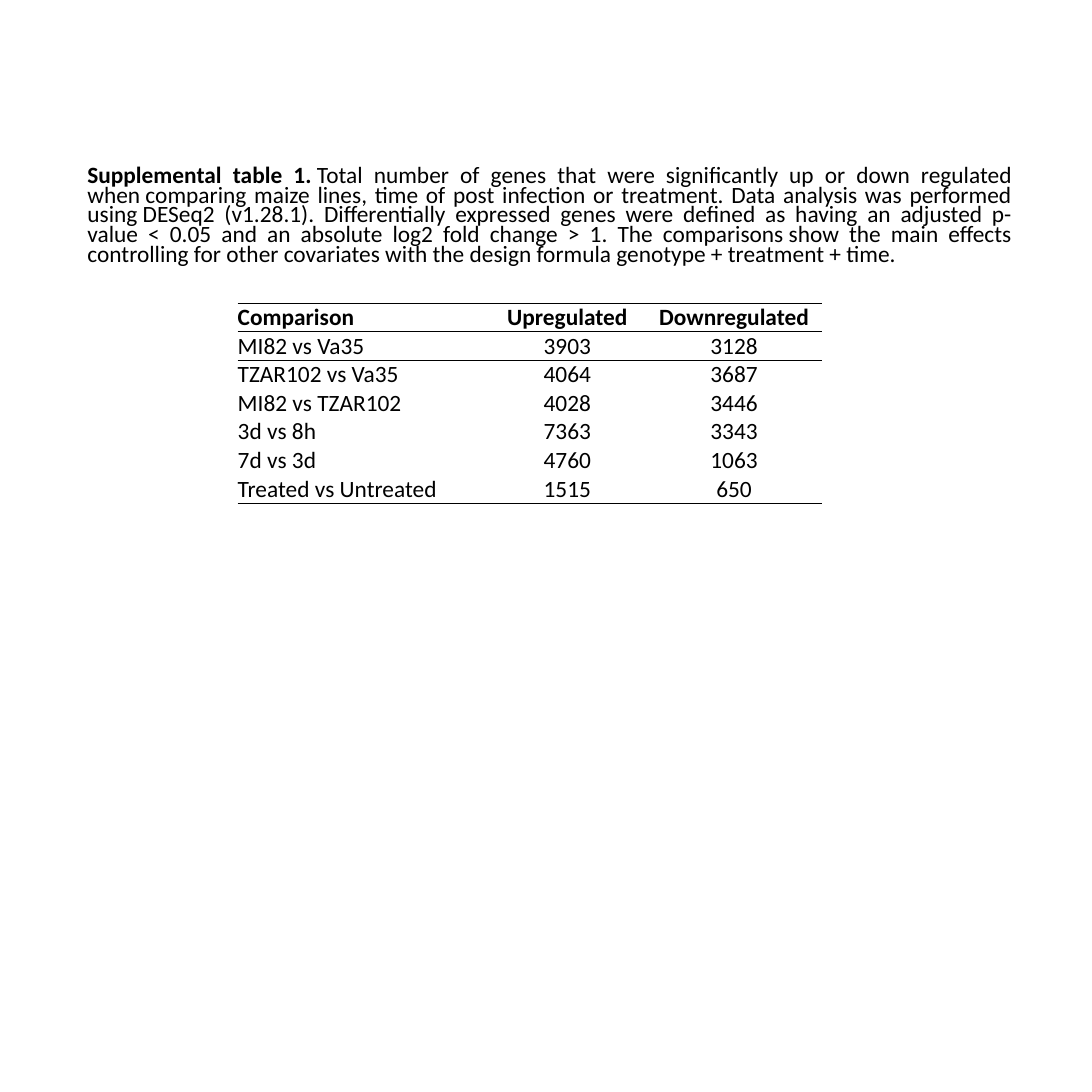
import pptx
import pptx.util
import pptx.dml.color
import pptx.enum.text
import pptx.oxml.ns
from lxml import etree
from pptx.util import Inches

COLORS = {"ink": "000000", "paper": "FFFFFF"}
FONT = "Calibri"
ALIGN = pptx.enum.text.PP_ALIGN
ANCHOR = pptx.enum.text.MSO_ANCHOR
HARD_SPACE = chr(160)  # keeps the words on either side on one line

CAPTION_LABEL = f"Supplemental table 1.{HARD_SPACE}"
CAPTION = (
    "Total number of genes that were significantly up or down regulated "
    f"when{HARD_SPACE}comparing maize lines, time of post infection or treatment. "
    f"Data analysis was performed using{HARD_SPACE}DESeq2 (v1.28.1). "
    "Differentially expressed genes were defined as having an adjusted "
    "p-value < 0.05 and an absolute log2 fold change > 1. "
    f"The comparisons{HARD_SPACE}show the main effects controlling for other covariates "
    f"with the design formula{HARD_SPACE}genotype + treatment +{HARD_SPACE}time."
)
GENE_COUNTS = [
    ("Comparison", "Upregulated", "Downregulated"),
    ("MI82 vs Va35", 3903, 3128),
    (f"TZAR102{HARD_SPACE}vs{HARD_SPACE}Va35", 4064, 3687),
    (f"MI82{HARD_SPACE}vs{HARD_SPACE}TZAR102", 4028, 3446),
    ("3d vs 8h", 7363, 3343),
    ("7d vs 3d", 4760, 1063),
    ("Treated vs Untreated", 1515, 650),
]
COLUMN_WIDTHS = (2.99, 1.87, 2.1)
ROW_HEIGHT = 0.34
RULED_EDGES = {0, 1, 2, len(GENE_COUNTS)}


def add_text(para, text, size=20, bold=False, align=ALIGN.LEFT, color="ink"):
    para.alignment = align
    span = para.add_run()
    span.text = text
    span.font.name = FONT
    span.font.size = pptx.util.Pt(size)
    span.font.bold = bold
    span.font.color.rgb = pptx.dml.color.RGBColor.from_string(COLORS[color])


def set_borders(cell, ruled_sides):
    """Draw a 1 pt line on the ruled sides and clear the other sides."""
    qn = pptx.oxml.ns.qn
    properties = cell._tc.get_or_add_tcPr()
    for side in "LRTB":
        line = etree.SubElement(properties, qn(f"a:ln{side}"), w=str(pptx.util.Pt(1)))
        if side in ruled_sides:
            fill = etree.SubElement(line, qn("a:solidFill"))
            etree.SubElement(fill, qn("a:srgbClr"), val=COLORS["ink"])
        else:
            etree.SubElement(line, qn("a:noFill"))


def format_caption(box):
    box.left, box.top = Inches(0.94), Inches(1.95)
    box.width, box.height = Inches(11.21), Inches(1.42)
    frame = box.text_frame
    frame.word_wrap = True
    frame.auto_size = pptx.enum.text.MSO_AUTO_SIZE.NONE
    frame.vertical_anchor = ANCHOR.TOP
    para = frame.paragraphs[0]
    para.line_spacing = 0.7
    para.space_before = pptx.util.Pt(0)
    add_text(para, CAPTION_LABEL, bold=True, align=ALIGN.JUSTIFY)
    add_text(para, CAPTION, align=ALIGN.JUSTIFY)


def fill_cell(cell, value, row, column):
    cell.margin_left = cell.margin_right = cell.margin_top = cell.margin_bottom = 0
    cell.vertical_anchor = ANCHOR.MIDDLE
    add_text(cell.text_frame.paragraphs[0], str(value), bold=row == 0,
             align=ALIGN.CENTER if column else ALIGN.LEFT)
    sides = {"T": row, "B": row + 1}
    set_borders(cell, [side for side, edge in sides.items() if edge in RULED_EDGES])
    cell.fill.background()


def add_gene_table(slide):
    rows = len(GENE_COUNTS)
    table = slide.shapes.add_table(
        rows, len(COLUMN_WIDTHS), Inches(2.83), Inches(3.61),
        Inches(sum(COLUMN_WIDTHS)), Inches(ROW_HEIGHT * rows)).table
    table.horz_banding = False
    for column, width in zip(table.columns, COLUMN_WIDTHS):
        column.width = Inches(width)
    for row, values in enumerate(GENE_COUNTS):
        table.rows[row].height = Inches(ROW_HEIGHT)
        for column, value in enumerate(values):
            fill_cell(table.cell(row, column), value, row, column)


def main():
    deck = pptx.Presentation()
    deck.slide_width = deck.slide_height = Inches(13)
    slide = deck.slides.add_slide(deck.slide_layouts.get_by_name("Title Only"))
    background = slide.background.fill
    background.solid()
    background.fore_color.rgb = pptx.dml.color.RGBColor.from_string(COLORS["paper"])
    format_caption(slide.shapes.title)
    add_gene_table(slide)
    deck.save("out.pptx")


if __name__ == "__main__":
    main()
